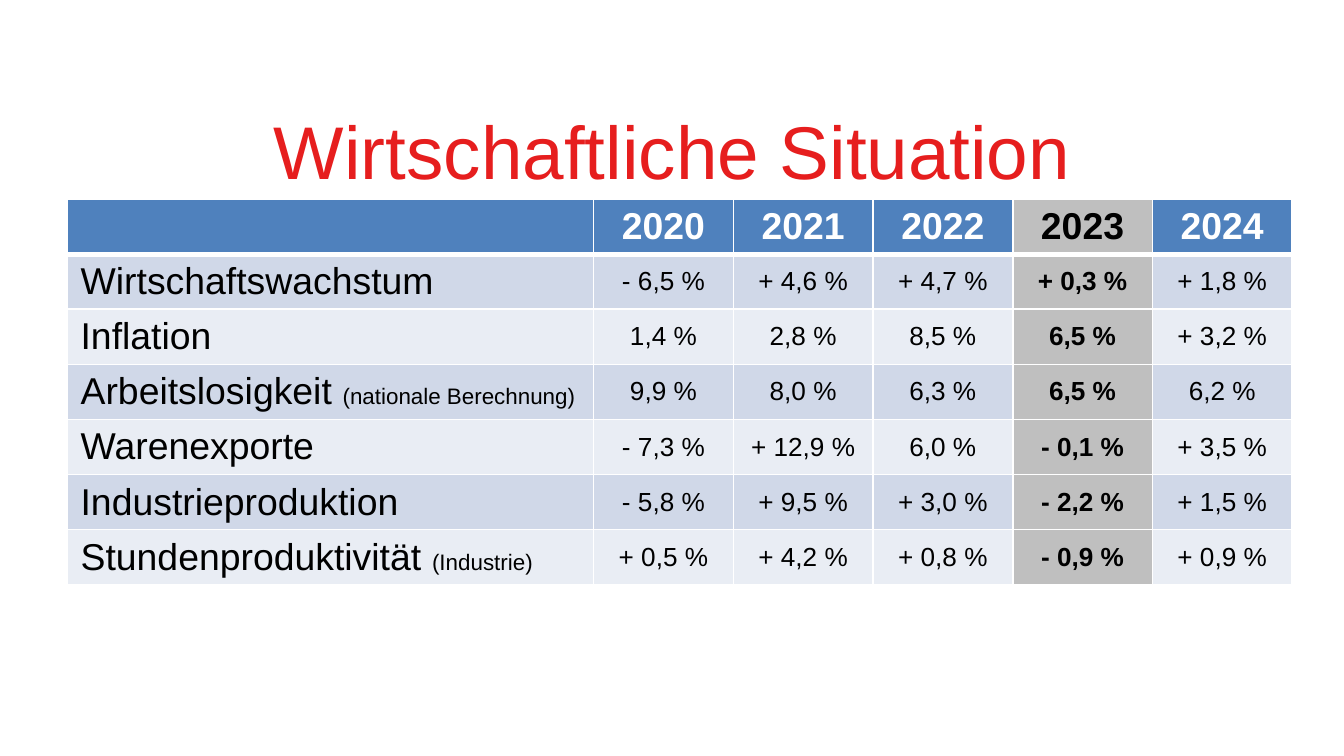
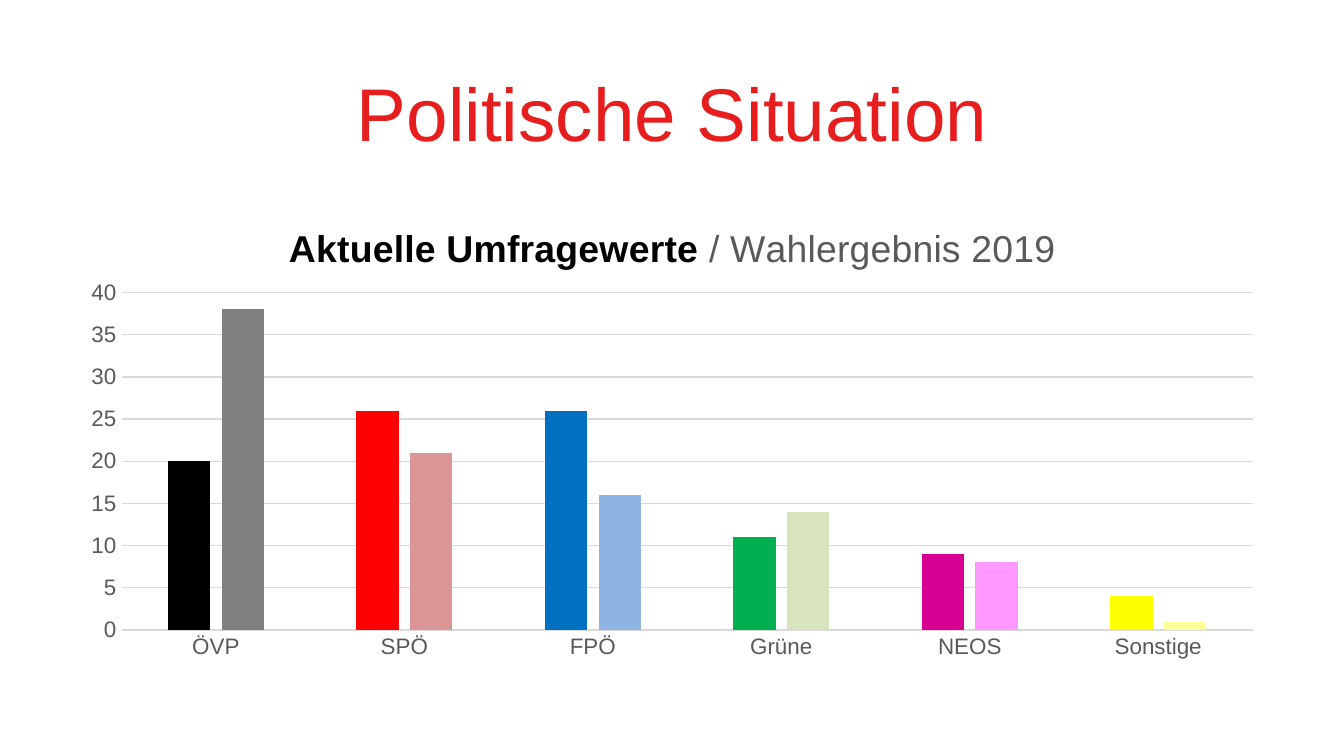
from lxml import etree
from pptx import Presentation
from pptx.chart import data as chart_data
from pptx.dml.color import RGBColor
from pptx.enum import chart as chart_enum, text
from pptx.oxml import ns
from pptx.util import Cm, Pt

FONT = "Arial"
WHITE = RGBColor(0xFF, 0xFF, 0xFF)
BLACK = RGBColor(0x00, 0x00, 0x00)
RED = RGBColor(0xE6, 0x1E, 0x1E)
HEADER_BLUE = RGBColor(0x4F, 0x81, 0xBD)
BAND_DARK = RGBColor(0xD0, 0xD8, 0xE8)
BAND_LIGHT = RGBColor(0xE9, 0xED, 0xF4)
HIGHLIGHT = RGBColor(0xBF, 0xBF, 0xBF)
AXIS_TEXT = RGBColor(0x59, 0x59, 0x59)
GRID = RGBColor(0xD9, 0xD9, 0xD9)
LEFT = Cm(1.27)
CONTENT_TOP = Cm(3.76)
CONTENT_WIDTH = Cm(22.86)


def add_run(paragraph, wording, size, color=BLACK, bold=False):
    run = paragraph.add_run()
    run.text = wording
    run.font.name = FONT
    run.font.size = Pt(size)
    run.font.bold = bold
    run.font.color.rgb = color


def add_titled_slide(presentation, title, top, height):
    slide = presentation.slides.add_slide(presentation.slide_layouts[5])
    shape = slide.shapes.title
    shape.left, shape.top, shape.width, shape.height = LEFT, top, CONTENT_WIDTH, height
    frame = shape.text_frame
    frame.auto_size = text.MSO_AUTO_SIZE.NONE
    frame.vertical_anchor = text.MSO_ANCHOR.MIDDLE
    frame.paragraphs[0].alignment = text.PP_ALIGN.CENTER
    add_run(frame.paragraphs[0], title, 40, RED)
    return slide


presentation = Presentation()
presentation.slide_width = Cm(25.4)
presentation.slide_height = Cm(14.29)

# Economic figures
slide = add_titled_slide(presentation, "Wirtschaftliche Situation", Cm(1.47), Cm(2.72))
YEARS = ["2020", "2021", "2022", "2023", "2024"]
HIGHLIGHT_COLUMN = 1 + YEARS.index("2023")
INDICATORS = [
    (["Wirtschaftswachstum"], ["- 6,5 %", "+ 4,6 %", "+ 4,7 %", "+ 0,3 %", "+ 1,8 %"]),
    (["Inflation"], ["1,4 %", "2,8 %", "8,5 %", "6,5 %", "+ 3,2 %"]),
    (["Arbeitslosigkeit ", "(nationale Berechnung)"],
     ["9,9 %", "8,0 %", "6,3 %", "6,5 %", "6,2 %"]),
    (["Warenexporte"], ["- 7,3 %", "+ 12,9 %", "6,0 %", "- 0,1 %", "+ 3,5 %"]),
    (["Industrieproduktion"], ["- 5,8 %", "+ 9,5 %", "+ 3,0 %", "- 2,2 %", "+ 1,5 %"]),
    (["Stundenproduktivität ", "(Industrie)"],
     ["+ 0,5 %", "+ 4,2 %", "+ 0,8 %", "- 0,9 %", "+ 0,9 %"]),
]
table_rows = [([], YEARS)] + INDICATORS
label_width, year_width, row_height = Cm(9.95), Cm(2.64), Cm(1.04)
table = slide.shapes.add_table(
    len(table_rows), 1 + len(YEARS), LEFT, CONTENT_TOP,
    label_width + year_width * len(YEARS), row_height * len(table_rows)).table
for index, column in enumerate(table.columns):
    column.width = year_width if index else label_width

for row, (label, values) in enumerate(table_rows):
    table.rows[row].height = row_height
    for column in range(1 + len(YEARS)):
        cell = table.cell(row, column)
        properties = cell._tc.get_or_add_tcPr()
        for side in "LRTB":
            thick = (row, side) in [(0, "B"), (1, "T")]
            line = etree.SubElement(properties, ns.qn(f"a:ln{side}"), w=str(Pt(3 if thick else 1)))
            fill = etree.SubElement(line, ns.qn("a:solidFill"))
            etree.SubElement(fill, ns.qn("a:srgbClr"), val=str(WHITE))
        highlighted = column == HIGHLIGHT_COLUMN
        cell.fill.solid()
        if highlighted:
            cell.fill.fore_color.rgb = HIGHLIGHT
        elif row == 0:
            cell.fill.fore_color.rgb = HEADER_BLUE
        else:
            cell.fill.fore_color.rgb = BAND_DARK if row % 2 else BAND_LIGHT
        paragraph = cell.text_frame.paragraphs[0]
        if column == 0:
            for wording, size in zip(label, (20, 12)):
                add_run(paragraph, wording, size)
            continue
        cell.vertical_anchor = text.MSO_ANCHOR.MIDDLE
        paragraph.alignment = text.PP_ALIGN.CENTER
        if row == 0:
            add_run(paragraph, values[column - 1], 20, BLACK if highlighted else WHITE, True)
        else:
            add_run(paragraph, values[column - 1], 14, bold=highlighted)

# Poll and election results
slide = add_titled_slide(presentation, "Politische Situation", Cm(0.99), Cm(2.24))
PARTIES = [
    ("ÖVP", 20, 38, "000000", "808080"),
    ("SPÖ", 26, 21, "FF0000", "D99694"),
    ("FPÖ", 26, 16, "0070C0", "8EB4E3"),
    ("Grüne", 11, 14, "00B050", "D7E4BD"),
    ("NEOS", 9, 8, "D60093", "FF99FF"),
    ("Sonstige", 4, 1, "FFFF00", "FFFF99"),
]
names, polls, results, poll_colors, result_colors = zip(*PARTIES)
results_data = chart_data.CategoryChartData()
results_data.categories = names
results_data.add_series("Series 1", polls)
results_data.add_series("Series 2", results)
chart = slide.shapes.add_chart(
    chart_enum.XL_CHART_TYPE.COLUMN_CLUSTERED, LEFT, CONTENT_TOP,
    CONTENT_WIDTH, Cm(8.86), results_data).chart
chart.has_legend = False
chart.font.name = FONT
chart.font.size = Pt(10)
chart.font.color.rgb = BLACK

chart.has_title = True
chart_title = chart.chart_title
paragraph = chart_title.text_frame.paragraphs[0]
add_run(paragraph, "Aktuelle Umfragewerte", 20, bold=True)
add_run(paragraph, " / Wahlergebnis 2019", 20, AXIS_TEXT)
chart_title.include_in_layout = False

plot = chart.plots[0]
plot.gap_width = 219
plot.overlap = -27
plot.vary_by_categories = False
for series, base, colors in zip(plot.series, ("4F81BD", "C0504D"), (poll_colors, result_colors)):
    series.format.fill.solid()
    series.format.fill.fore_color.rgb = RGBColor.from_string(base)
    for index, color in enumerate(colors):
        point_fill = series.points[index].format.fill
        point_fill.solid()
        point_fill.fore_color.rgb = RGBColor.from_string(color)

for axis in (chart.category_axis, chart.value_axis):
    axis.major_tick_mark = axis.minor_tick_mark = chart_enum.XL_TICK_MARK.NONE
    axis.tick_labels.font.name = FONT
    axis.tick_labels.font.size = Pt(12)
    axis.tick_labels.font.color.rgb = AXIS_TEXT
chart.value_axis.minimum_scale = 0
chart.value_axis.maximum_scale = 40
chart.value_axis.major_unit = 5
chart.value_axis.has_major_gridlines = True
chart.value_axis.format.line.fill.background()
for line in (chart.category_axis.format.line, chart.value_axis.major_gridlines.format.line):
    line.color.rgb = GRID
    line.width = Pt(0.75)

# Fixed positions as fractions of the chart area
plot_area = chart._chartSpace.chart.plotArea
for old_layout in plot_area.findall(ns.qn("c:layout")):
    plot_area.remove(old_layout)
title_element = chart_title._element
for old_layout in title_element.findall(ns.qn("c:layout")):
    title_element.remove(old_layout)
LAYOUTS = [
    (plot_area, 0, [("layoutTarget", "inner"), ("xMode", "edge"), ("yMode", "edge"),
                    ("x", "0.045"), ("y", "0.2"), ("w", "0.935"), ("h", "0.72")]),
    (title_element, 1, [("xMode", "edge"), ("yMode", "edge"), ("x", "0.18"), ("y", "0.05")]),
]
for parent, position, settings in LAYOUTS:
    layout = etree.Element(ns.qn("c:layout"))
    manual = etree.SubElement(layout, ns.qn("c:manualLayout"))
    for name, value in settings:
        etree.SubElement(manual, ns.qn(f"c:{name}"), val=value)
    parent.insert(position, layout)

presentation.save("out.pptx")
